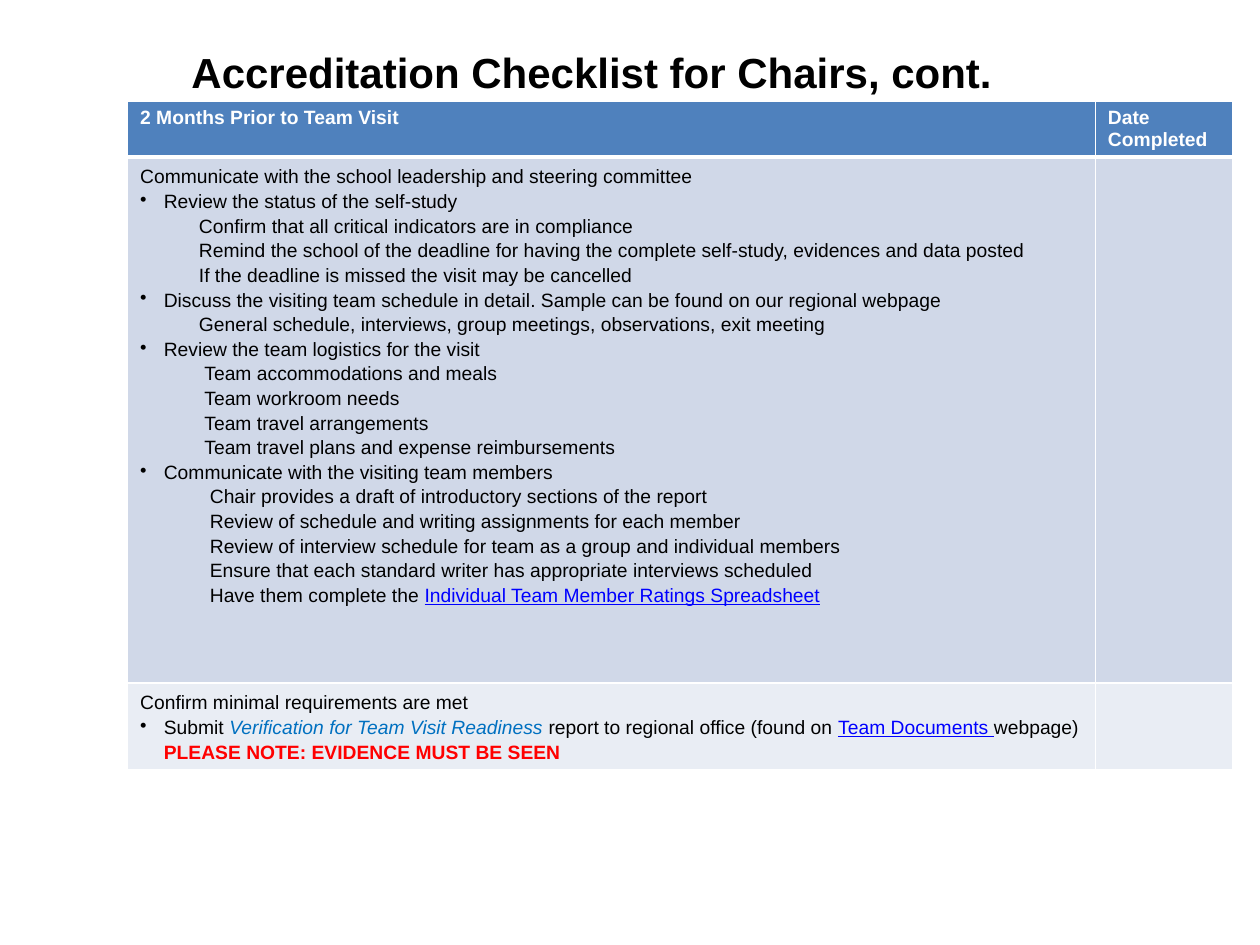
import pptx
import pptx.dml.color
import pptx.enum.text
import pptx.oxml
import pptx.oxml.ns
import pptx.util

Pt = pptx.util.Pt
FONT = "Arial"
BLACK, WHITE, LINK, BLUE, RED = "000000", "FFFFFF", "0000FF", "0070C0", "FF0000"
FILLS = ["4F81BD", "D0D8E8", "E9EDF4"]
COL_WIDTHS = [553, 78.5]
ROW_HEIGHTS = [32, 300.5, 49]
BULLET_INDENT = 13.5

HEADER = ["2 Months Prior to Team Visit", "Date Completed"]
SECTIONS = [
    ("Review the status of the self-study", 33.6, [
        "Confirm that all critical indicators are in compliance",
        "Remind the school of the deadline for having the complete self-study, evidences and data posted",
        "If the deadline is missed the visit may be cancelled"]),
    ("Discuss the visiting team schedule in detail. Sample can be found on our regional webpage", 33.6, [
        "General schedule, interviews, group meetings, observations, exit meeting"]),
    ("Review the team logistics for the visit", 36.7, [
        "Team accommodations and meals",
        "Team workroom needs",
        "Team travel arrangements",
        "Team travel plans and expense reimbursements"]),
    ("Communicate with the visiting team members", 39.8, [
        "Chair provides a draft of introductory sections of the report",
        "Review of schedule and writing assignments for each member",
        "Review of interview schedule for team as a group and individual members",
        "Ensure that each standard writer has appropriate interviews scheduled"]),
]


def rgb(value):
    """Turn a hex string into a colour."""
    return pptx.dml.color.RGBColor.from_string(value)


def add_run(p, text, color=BLACK, size=11, bold=False, italic=False, underline=False):
    """Append one formatted run to a paragraph."""
    r = p.add_run()
    r.text = text
    font = r.font
    font.name, font.size = FONT, Pt(size)
    font.bold, font.italic, font.underline = bold, italic, underline
    font.color.rgb = rgb(color)


def add_line(tf, indent=0, bullet=False):
    """Return the next paragraph of a checklist cell, indented or bulleted."""
    p = tf.paragraphs[0]
    if p.runs:
        p = tf.add_paragraph()
    p.line_spacing = 1.15
    pPr = p._p.get_or_add_pPr()
    pPr.set("marL", str(Pt(indent)))
    pPr.set("indent", str(-Pt(indent) if bullet else 0))
    if bullet:
        pPr.append(pptx.oxml.parse_xml(
            f'<a:buChar {pptx.oxml.ns.nsdecls("a")} char="•"/>'))
    return p


def style_cell(cell, fill, top, bottom):
    """Fill a cell and give it white borders."""
    cell.fill.solid()
    cell.fill.fore_color.rgb = rgb(fill)
    tcPr = cell._tc.get_or_add_tcPr()
    for i, (side, width) in enumerate(zip("LRTB", (1, 1, top, bottom))):
        tcPr.insert(i, pptx.oxml.parse_xml(
            f'<a:ln{side} {pptx.oxml.ns.nsdecls("a")} w="{Pt(width)}"><a:solidFill>'
            f'<a:srgbClr val="{WHITE}"/></a:solidFill></a:ln{side}>'))


def fill_visit_cell(tf):
    """Write the checklist for the months before the visit."""
    add_run(add_line(tf), "Communicate with the school leadership and steering committee")
    for heading, indent, items in SECTIONS:
        add_run(add_line(tf, BULLET_INDENT, True), heading)
        for item in items:
            add_run(add_line(tf, indent), item)
    p = add_line(tf, indent)
    add_run(p, "Have them complete the ")
    add_run(p, "Individual Team Member Ratings Spreadsheet", LINK, underline=True)


def fill_requirements_cell(tf):
    """Write the minimal requirements with their closing note."""
    add_run(add_line(tf), "Confirm minimal requirements are met")
    p = add_line(tf, BULLET_INDENT, True)
    add_run(p, "Submit ")
    add_run(p, "Verification for Team Visit Readiness ", BLUE, italic=True)
    add_run(p, "report to regional office (found on ")
    add_run(p, "Team Documents ", LINK, underline=True)
    add_run(p, "webpage)")
    add_run(p, " PLEASE NOTE: EVIDENCE MUST BE SEEN", RED, bold=True)


def add_title(s, left, top, width, height):
    """Place the slide title in its box."""
    sp = s.shapes.title
    sp.left, sp.top, sp.width, sp.height = Pt(left), Pt(top), Pt(width), Pt(height)
    tf = sp.text_frame
    tf.word_wrap = True
    tf.auto_size = pptx.enum.text.MSO_AUTO_SIZE.NONE
    tf.vertical_anchor = pptx.enum.text.MSO_ANCHOR.TOP
    tf.margin_top = Pt(7.4)
    p = tf.paragraphs[0]
    p.alignment = pptx.enum.text.PP_ALIGN.LEFT
    add_run(p, "Accreditation Checklist for Chairs, cont.", size=24, bold=True)


def add_checklist(s, left, top):
    """Place the checklist table with its top left corner at the given point."""
    table = s.shapes.add_table(
        len(ROW_HEIGHTS), len(COL_WIDTHS), Pt(left), Pt(top),
        Pt(sum(COL_WIDTHS)), Pt(sum(ROW_HEIGHTS))).table
    for column, width in zip(table.columns, COL_WIDTHS):
        column.width = Pt(width)
    for i, (row, height) in enumerate(zip(table.rows, ROW_HEIGHTS)):
        row.height = Pt(height)
        for cell in row.cells:
            style_cell(cell, FILLS[i], 3 if i == 1 else 1, 3 if i == 0 else 1)
    for cell, text in zip(table.rows[0].cells, HEADER):
        add_run(cell.text_frame.paragraphs[0], text, WHITE, bold=True)
    fill_visit_cell(table.cell(1, 0).text_frame)
    fill_requirements_cell(table.cell(2, 0).text_frame)


def main():
    """Build the slide and save it."""
    prs = pptx.Presentation()
    prs.slide_width, prs.slide_height = Pt(720), Pt(540)
    s = prs.slides.add_slide(prs.slide_layouts[5])
    add_title(s, 102.2, 19.4, 581.8, 49)
    add_checklist(s, 72.9, 57.8)
    prs.save("out.pptx")


if __name__ == "__main__":
    main()
